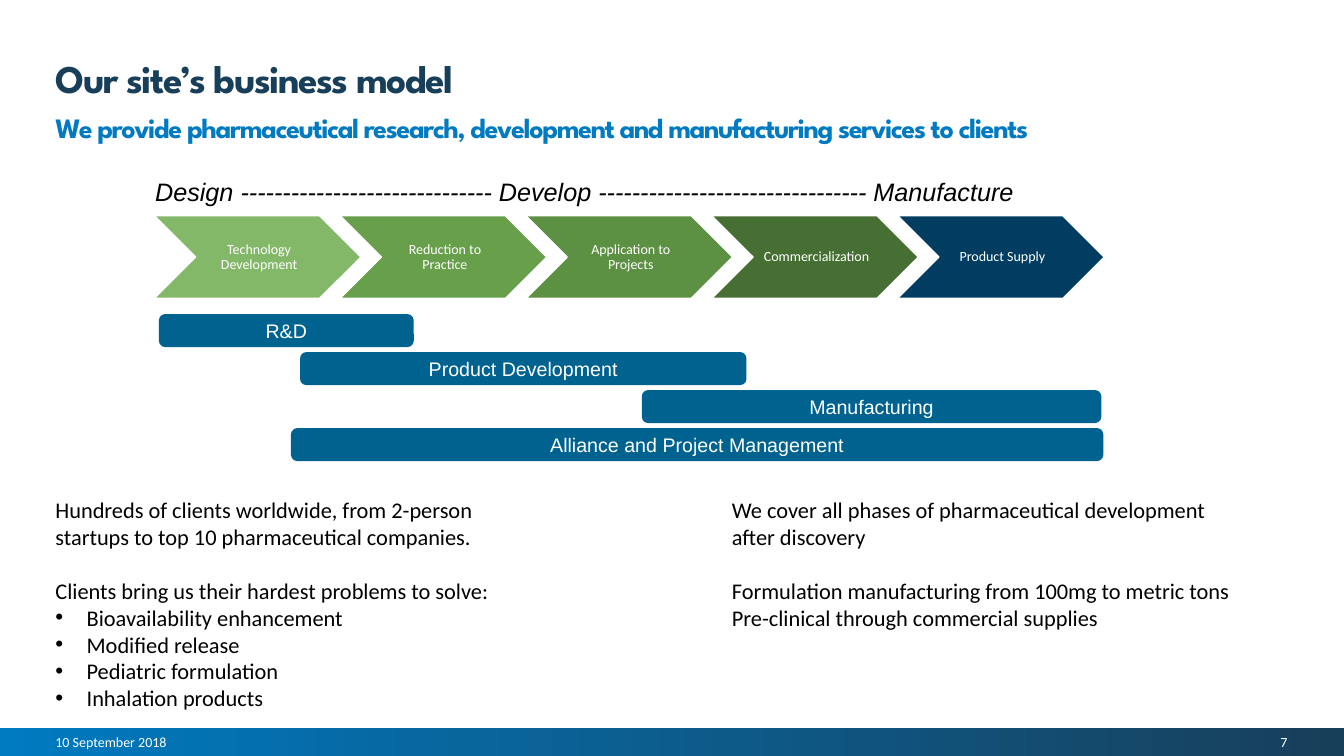
from dataclasses import dataclass
from lxml.etree import SubElement
from pptx import Presentation
from pptx.dml.color import RGBColor
from pptx.enum.shapes import MSO_SHAPE as Shape
from pptx.enum.text import MSO_ANCHOR as Anchor, PP_ALIGN as Align
from pptx.oxml.ns import qn
from pptx.util import Inches, Pt

# Content
TITLE = "Our site’s business model"
SUBTITLE = "We provide pharmaceutical research, development and manufacturing services to clients"
PHASES = "Design ------------------------------ Develop -------------------------------- Manufacture"
STAGES = [
    ("Technology Development", "83B868"),
    ("Reduction to Practice", "679F4B"),
    ("Application to Projects", "5C9042"),
    ("Commercialization", "476F33"),
    ("Product Supply", "003D60"),
]
# Name, left edge and width of each bar
TEAMS = [
    ("R&D", 1.59, 2.5),
    ("Product Development", 2.99, 4.4),
    ("Manufacturing", 6.38, 4.53),
    ("Alliance and Project Management", 2.9, 8.03),
]
# Each column: left, width, then groups of (lead lines, bullets)
COLUMNS = [
    (0.55, 4.56, [
        (["Hundreds of clients worldwide, from 2-person startups to top 10 "
          "pharmaceutical companies."], []),
        (["Clients bring us their hardest problems to solve:"],
         ["Bioavailability enhancement", "Modified release",
          "Pediatric formulation", "Inhalation products"]),
    ]),
    (7.26, 4.97, [
        (["We cover all phases of pharmaceutical development after discovery"], []),
        (["Formulation manufacturing from 100mg to metric tons",
          "Pre-clinical through commercial supplies"], []),
    ]),
]
DATE, PAGE_NUMBER = "10 September 2018", "7"


@dataclass(frozen=True)
class Theme:
    heading: str = "League Spartan"
    body: str = "Calibri"
    diagram: str = "Arial"
    navy: str = "183F5A"
    blue: str = "007AC0"
    bar: str = "00628E"
    white: str = "FFFFFF"
    black: str = "000000"
    title_size: int = 28
    subtitle_size: int = 20
    phase_size: int = 18
    body_size: int = 16
    bar_size: int = 14
    small_size: int = 10


theme = Theme()
WIDTH, HEIGHT = 13.33, 7.5
MARGIN = 0.55
FOOTER_HEIGHT = 0.28
STAGE_LEFT, STAGE_TOP, STAGE_STEP = 1.53, 2.14, 1.843
STAGE_WIDTH, STAGE_HEIGHT = 2.05, 0.82
BAR_TOP, BAR_STEP, BAR_HEIGHT = 3.13, 0.377, 0.3
COLUMN_TOP, COLUMN_HEIGHT = 4.92, 2.04
BULLET_INDENT = 0.31
GROUP_GAP = 19.5

deck = Presentation()
deck.slide_width, deck.slide_height = Inches(WIDTH), Inches(HEIGHT)
page = deck.slides.add_slide(deck.slide_layouts[6])


def style(para, font, size, color, bold=False, italic=False):
    for span in para.runs:
        span.font.name, span.font.size = font, Pt(size)
        span.font.bold, span.font.italic = bold, italic
        span.font.color.rgb = RGBColor.from_string(color)


def add_text(text, place, font, size, color, align=Align.LEFT,
             anchor=Anchor.TOP, insets=(0, 0, 0, 0), **looks):
    box = page.shapes.add_textbox(*map(Inches, place))
    frame = box.text_frame
    frame.word_wrap, frame.vertical_anchor = True, anchor
    (frame.margin_left, frame.margin_top,
     frame.margin_right, frame.margin_bottom) = map(Inches, insets)
    para = frame.paragraphs[0]
    para.text, para.alignment = text, align
    style(para, font, size, color, **looks)
    return frame


def add_heading(text, place, size, color, anchor):
    para = add_text(text, place, theme.heading, size, color,
                    anchor=anchor, bold=True).paragraphs[0]
    para.line_spacing = Pt(33)
    para.runs[0].font._element.set("spc", "-100")


def add_block(kind, place, fill, line, line_width):
    block = page.shapes.add_shape(kind, *map(Inches, place))
    block.shadow.inherit = False
    block.fill.solid()
    block.fill.fore_color.rgb = RGBColor.from_string(fill)
    block.line.color.rgb = RGBColor.from_string(line)
    block.line.width = Pt(line_width)
    return block


def add_bullet(para):
    props = para._p.get_or_add_pPr()
    props.set("marL", str(Inches(BULLET_INDENT)))
    props.set("indent", str(-Inches(BULLET_INDENT)))
    SubElement(props, qn("a:buFont"), typeface="Arial")
    SubElement(props, qn("a:buChar"), char="•")


# Footer band with date and page number
band = page.shapes.add_shape(Shape.RECTANGLE, 0, Inches(HEIGHT - FOOTER_HEIGHT),
                             Inches(WIDTH), Inches(FOOTER_HEIGHT))
band.shadow.inherit = False
band.line.fill.background()
band.fill.gradient()
band.fill.gradient_angle = 0
for stop, color in zip(band.fill.gradient_stops, (theme.blue, theme.navy)):
    stop.color.rgb = RGBColor.from_string(color)
for text, left, width, align in [(DATE, MARGIN, 9.86, Align.LEFT),
                                 (PAGE_NUMBER, 10.97, 1.8, Align.RIGHT)]:
    add_text(text, (left, 7.24, width, 0.24), theme.body, theme.small_size,
             theme.white, align, Anchor.MIDDLE)

# Headings
add_heading(TITLE, (MARGIN, 0.55, 10.71, 0.47), theme.title_size, theme.navy, Anchor.TOP)
add_heading(SUBTITLE, (MARGIN, 1.04, 12.22, 0.39), theme.subtitle_size, theme.blue,
            Anchor.BOTTOM)

# Phases and stage chevrons
add_text(PHASES, (1.44, 1.7, 9.54, 0.4), theme.diagram, theme.phase_size, theme.black,
         insets=(0.1, 0.05, 0.1, 0.05), italic=True)
for index, (name, color) in enumerate(STAGES):
    left = STAGE_LEFT + index * STAGE_STEP
    add_block(Shape.CHEVRON, (left, STAGE_TOP, STAGE_WIDTH, STAGE_HEIGHT),
              color, theme.white, 1)
    label = add_text(name, (left + STAGE_HEIGHT / 2, STAGE_TOP,
                            STAGE_WIDTH - STAGE_HEIGHT, STAGE_HEIGHT),
                     theme.body, theme.small_size, theme.white, Align.CENTER,
                     Anchor.MIDDLE, (0.04, 0.01, 0.01, 0.01))
    label.paragraphs[0].line_spacing = 0.9

# Team bars
for row, (name, left, width) in enumerate(TEAMS):
    bar = add_block(Shape.ROUNDED_RECTANGLE,
                    (left, BAR_TOP + row * BAR_STEP, width, BAR_HEIGHT),
                    theme.bar, theme.bar, 2)
    bar.text_frame.text = name
    bar.text_frame.vertical_anchor = Anchor.MIDDLE
    para = bar.text_frame.paragraphs[0]
    para.alignment = Align.CENTER
    style(para, theme.diagram, theme.bar_size, theme.white)

# Text columns
for left, width, groups in COLUMNS:
    lines = [(text, text in bullets, number > 0 and text == leads[0])
             for number, (leads, bullets) in enumerate(groups)
             for text in leads + bullets]
    frame = add_text(lines[0][0], (left, COLUMN_TOP, width, COLUMN_HEIGHT),
                     theme.body, theme.body_size, theme.black)
    for text, bulleted, opens_group in lines[1:]:
        para = frame.add_paragraph()
        para.text = text
        if opens_group:
            para.space_before = Pt(GROUP_GAP)
        if bulleted:
            add_bullet(para)
        style(para, theme.body, theme.body_size, theme.black)

deck.save("out.pptx")
